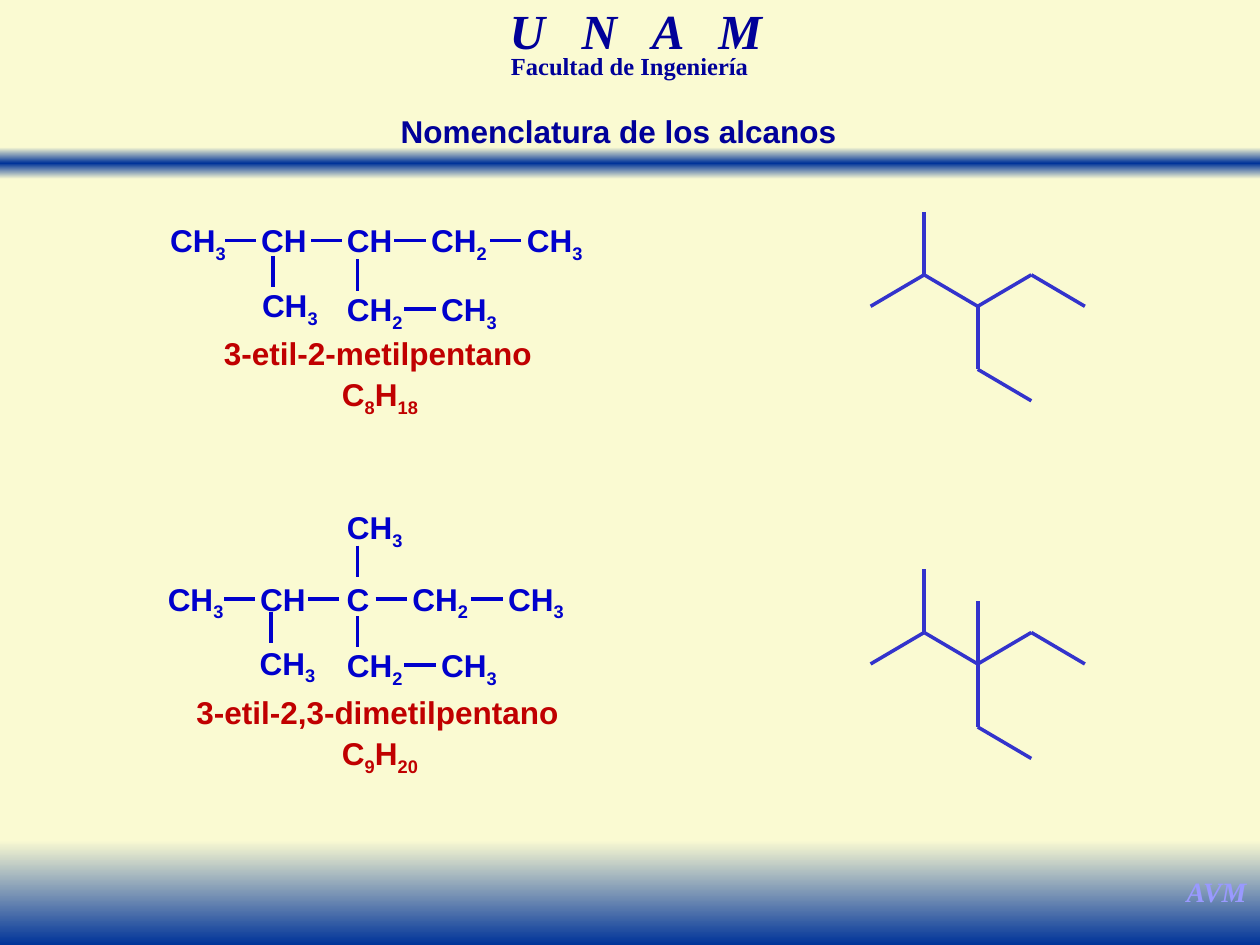
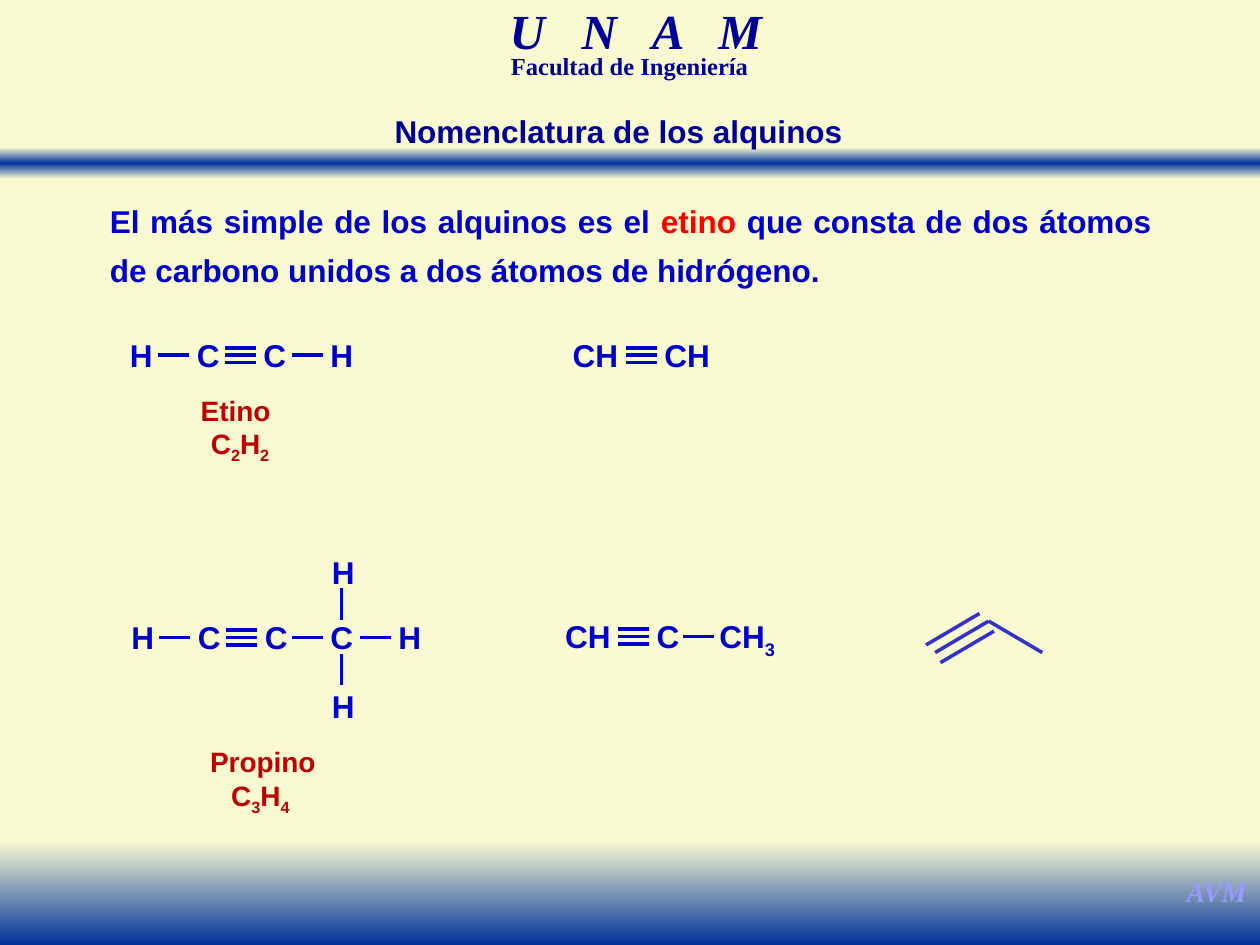
from copy import deepcopy
from dataclasses import dataclass
from itertools import groupby

from lxml.etree import SubElement
from pptx import Presentation
from pptx.dml.color import RGBColor
from pptx.enum.shapes import MSO_CONNECTOR as Connector, MSO_SHAPE as Preset
from pptx.enum.text import MSO_ANCHOR as Anchor, MSO_AUTO_SIZE as AutoSize, PP_ALIGN as Align
from pptx.oxml.ns import qn
from pptx.util import Cm, Pt


@dataclass(frozen=True)
class Theme:
    paper: str = "FAFAD2"
    band: str = "003399"
    heading: str = "000099"
    signature: str = "9999FF"
    structure: str = "0000CC"
    skeleton: str = "3333CC"
    caption: str = "C00000"
    highlight: str = "FF0000"
    sans: str = "Arial"
    serif: str = "Times New Roman"
    school_size: int = 28
    faculty_size: int = 14
    text_size: int = 18
    small_size: int = 16
    bond_width: int = 2


THEME = Theme()

# All lengths are in centimetres.
PAGE_WIDTH, PAGE_HEIGHT = 25.4, 19.05
LABEL_HEIGHT = 1.02
BOND_LENGTH = 0.63
TRIPLE_GAP = 0.15
STEP_X, STEP_Y = 1.08, 0.635

# Skeleton vertices, counted in steps from the skeleton's origin.
ETHYL_METHYL_PENTANE = [
    [(0, 1), (1, 0), (2, 1), (3, 0), (4, 1)],
    [(1, 0), (1, -2)],
    [(2, 1), (2, 3), (3, 4)],
]
PROPYNE = [
    [(0, 1), (1, 0), (2, 1)],
    [(0.1, 1.32), (1.1, 0.32)],
    [(-0.17, 0.76), (0.83, -0.24)],
]

# rows: top, then (bond to the left, formula, left); stems: upright bonds (x, top)
# captions: text, centre, top, width (None for a formula)
ALKANES = {
    "title": "Nomenclatura de los alcanos",
    "caption_size": THEME.text_size,
    "structures": [
        {
            "rows": [
                (4.34, [("", "CH3", 3.15), ("-", "CH", 5.0), ("-", "CH", 6.73),
                        ("-", "CH2", 8.41), ("-", "CH3", 10.34)]),
                (5.72, [("", "CH2", 6.71), ("-", "CH3", 8.61)]),
                (5.64, [("", "CH3", 5.0)]),
            ],
            "stems": [(7.21, 5.23), (5.5, 5.16)],
        },
        {
            "rows": [
                (11.56, [("", "CH3", 3.1), ("-", "CH", 4.98), ("-", "C", 6.73),
                         ("-", "CH2", 8.03), ("-", "CH3", 9.96)]),
                (12.9, [("", "CH2", 6.71), ("-", "CH3", 8.61)]),
                (12.85, [("", "CH3", 4.95)]),
                (10.11, [("", "CH3", 6.71)]),
            ],
            "stems": [(7.21, 12.42), (5.46, 12.34), (7.21, 11.0)],
        },
    ],
    "skeletons": [
        (17.55, 5.54, ETHYL_METHYL_PENTANE),
        (17.55, 12.75, ETHYL_METHYL_PENTANE + [[(2, 1), (2, -1)]]),
    ],
    "captions": [
        ("3-etil-2-metilpentano", 7.62, 6.6, 7.06),
        ("C8H18", 7.66, 7.44, None),
        ("3-etil-2,3-dimetilpentano", 7.61, 13.84, 9.17),
        ("C9H20", 7.66, 14.68, None),
    ],
}

ALKYNES = {
    "title": "Nomenclatura de los alquinos",
    "caption_size": THEME.small_size,
    "intro": [
        ("El más simple de los alquinos es el ", THEME.structure),
        ("etino ", THEME.highlight),
        ("que consta de dos átomos de carbono unidos a dos átomos de hidrógeno.",
         THEME.structure),
    ],
    "structures": [
        {"rows": [(6.65, [("", "H", 2.36), ("-", "C", 3.71), ("≡", "C", 5.05),
                          ("-", "H", 6.4)])],
         "stems": []},
        {"rows": [(6.65, [("", "CH", 11.28), ("≡", "CH", 13.13)])], "stems": []},
        {
            "rows": [
                (12.34, [("", "H", 2.39), ("-", "C", 3.73), ("≡", "C", 5.08),
                         ("-", "C", 6.4), ("-", "H", 7.77)]),
                (13.72, [("", "H", 6.43)]),
                (11.02, [("", "H", 6.43)]),
            ],
            "stems": [(6.88, 13.18), (6.88, 11.86)],
        },
        {"rows": [(12.32, [("", "CH", 11.13), ("≡", "C", 12.98), ("-", "CH3", 14.22)])],
         "stems": []},
    ],
    "skeletons": [(18.85, 12.52, PROPYNE)],
    "captions": [
        ("Etino", 4.75, 7.8, 1.93),
        ("C2H2", 4.84, 8.48, None),
        ("Propino", 5.3, 14.88, 2.67),
        ("C3H4", 5.25, 15.57, None),
    ],
}

# text, left, top, width, height, size, colour, italic, line spacing, letter spacing
LETTERHEAD = [
    ("U N A M", 7.84, 0.2, 9.96, 1.09, THEME.school_size, THEME.heading, True, 0.7, 7),
    ("Facultad de Ingeniería", 8.15, 1.07, 9.09, 0.66, THEME.faculty_size,
     THEME.heading, False, 0.7, 0),
    ("AVM", 23.65, 17.5, 1.75, 0.94, THEME.small_size, THEME.signature, True, 1.0, 0),
]
# top, height, colours from top to bottom
BANDS = [
    (2.97, 0.64, [THEME.paper, THEME.band, THEME.paper]),
    (16.94, 2.11, [THEME.paper, THEME.band]),
]


def style(run, size, colour, face=THEME.sans, italic=False):
    font = run.font
    font.name, font.size, font.bold, font.italic = face, Pt(size), True, italic
    font.color.rgb = RGBColor.from_string(colour)


def place(shape, left, top, width, height):
    shape.left, shape.top, shape.width, shape.height = map(Cm, (left, top, width, height))


def add_band(slide, top, height, colours):
    band = slide.shapes.add_shape(Preset.RECTANGLE, 0, Cm(top), Cm(PAGE_WIDTH), Cm(height))
    band.shadow.inherit = False
    band.line.fill.background()
    band.fill.gradient()
    band.fill.gradient_angle = 270
    stops = band._element.spPr.find(".//" + qn("a:gsLst"))
    for _ in colours[2:]:
        stops.insert(1, deepcopy(stops[0]))
    for index, (stop, colour) in enumerate(zip(band.fill.gradient_stops, colours)):
        stop.position = index / (len(colours) - 1)
        stop.color.rgb = RGBColor.from_string(colour)
    # Bands lie behind the title, whose descenders reach into them.
    band._element.getparent().insert(2, band._element)


def add_letterhead(slide):
    for text, left, top, width, height, size, colour, italic, leading, tracking in LETTERHEAD:
        box = slide.shapes.add_textbox(Cm(left), Cm(top), Cm(width), Cm(height))
        box.text_frame.word_wrap = tracking > 0 or leading < 1
        box.text_frame.text = text
        line = box.text_frame.paragraphs[0]
        line.alignment, line.line_spacing = Align.CENTER, leading
        style(line.runs[0], size, colour, THEME.serif, italic)
        if tracking:
            line.runs[0]._r.get_or_add_rPr().set("spc", str(tracking * 100))


def formula_width(formula, size):
    digits = sum(map(str.isdigit, formula))
    return 0.51 + size * (0.026 * (len(formula) - digits) + 0.0133 * digits)


def add_label(shapes, text, left, top, width, size, colour, is_formula=True):
    """Centred one-line label; the digits of a formula become subscripts."""
    box = shapes.add_textbox(Cm(left), Cm(top), Cm(width), Cm(LABEL_HEIGHT * size / 18))
    box.text_frame.word_wrap = False
    line = box.text_frame.paragraphs[0]
    line.alignment = Align.CENTER
    parts = groupby(text, str.isdigit) if is_formula else [(False, text)]
    for is_subscript, part in parts:
        run = line.add_run()
        run.text = "".join(part)
        style(run, size, colour)
        if is_subscript:
            run._r.get_or_add_rPr().set("baseline", "-25000")


def add_bond(shapes, start, end, colour):
    bond = shapes.add_connector(Connector.STRAIGHT, *map(Cm, (*start, *end)))
    bond.line.color.rgb = RGBColor.from_string(colour)
    bond.line.width = Pt(THEME.bond_width)
    SubElement(bond._element.spPr, qn("a:effectLst"))


def add_structure(slide, rows, stems):
    shapes = slide.shapes.add_group_shape().shapes
    for top, atoms in rows:
        for bond, formula, left in atoms:
            add_label(shapes, formula, left, top, formula_width(formula, THEME.text_size),
                      THEME.text_size, THEME.structure)
            if not bond:
                continue
            start = left - (0.52 if bond == "≡" or len(formula) == 1 else 0.46)
            for level in (-1, 0, 1) if bond == "≡" else (0,):
                y = top + LABEL_HEIGHT / 2 + level * TRIPLE_GAP
                add_bond(shapes, (start, y), (start + BOND_LENGTH, y), THEME.structure)
    for x, top in stems:
        add_bond(shapes, (x, top), (x, top + BOND_LENGTH), THEME.structure)


def add_skeleton(slide, left, top, chains):
    shapes = slide.shapes.add_group_shape().shapes
    for chain in chains:
        corners = [(left + x * STEP_X, top + y * STEP_Y) for x, y in chain]
        for start, end in zip(corners, corners[1:]):
            add_bond(shapes, start, end, THEME.skeleton)


def fill_title(title, text):
    place(title, 2.47, 2.13, 20, LABEL_HEIGHT)
    title.text_frame.auto_size = AutoSize.NONE
    title.text_frame.vertical_anchor = Anchor.MIDDLE
    title.text_frame.text = text
    line = title.text_frame.paragraphs[0]
    line.alignment = Align.CENTER
    style(line.runs[0], THEME.text_size, THEME.heading)


def fill_intro(body, parts):
    place(body, 1.96, 3.71, 21.51, 2.26)
    body.text_frame.auto_size = AutoSize.NONE
    line = body.text_frame.paragraphs[0]
    properties = line._p.get_or_add_pPr()
    properties.set("marL", "0")
    properties.set("indent", "0")
    SubElement(properties, qn("a:buNone"))
    line.alignment, line.line_spacing, line.space_before = Align.JUSTIFY, 1.3, Pt(0)
    for text, colour in parts:
        run = line.add_run()
        run.text = text
        style(run, THEME.text_size, colour)


def add_slide(deck, content):
    intro = content.get("intro")
    title_and_content, title_only = deck.slide_layouts[1], deck.slide_layouts[5]
    slide = deck.slides.add_slide(title_and_content if intro else title_only)
    for band in BANDS:
        add_band(slide, *band)
    add_letterhead(slide)
    fill_title(slide.shapes.title, content["title"])
    if intro:
        fill_intro(slide.placeholders[1], intro)
    size = content["caption_size"]
    for text, centre, top, name_width in content["captions"]:
        width = name_width or formula_width(text, size)
        add_label(slide.shapes, text, centre - width / 2, top, width, size,
                  THEME.caption, is_formula=name_width is None)
    for structure in content["structures"]:
        add_structure(slide, **structure)
    for skeleton in content["skeletons"]:
        add_skeleton(slide, *skeleton)


def main():
    deck = Presentation()
    deck.slide_width, deck.slide_height = Cm(PAGE_WIDTH), Cm(PAGE_HEIGHT)
    paper = deck.slide_master.background.fill
    paper.solid()
    paper.fore_color.rgb = RGBColor.from_string(THEME.paper)
    for content in (ALKANES, ALKYNES):
        add_slide(deck, content)
    deck.save("out.pptx")


if __name__ == "__main__":
    main()
